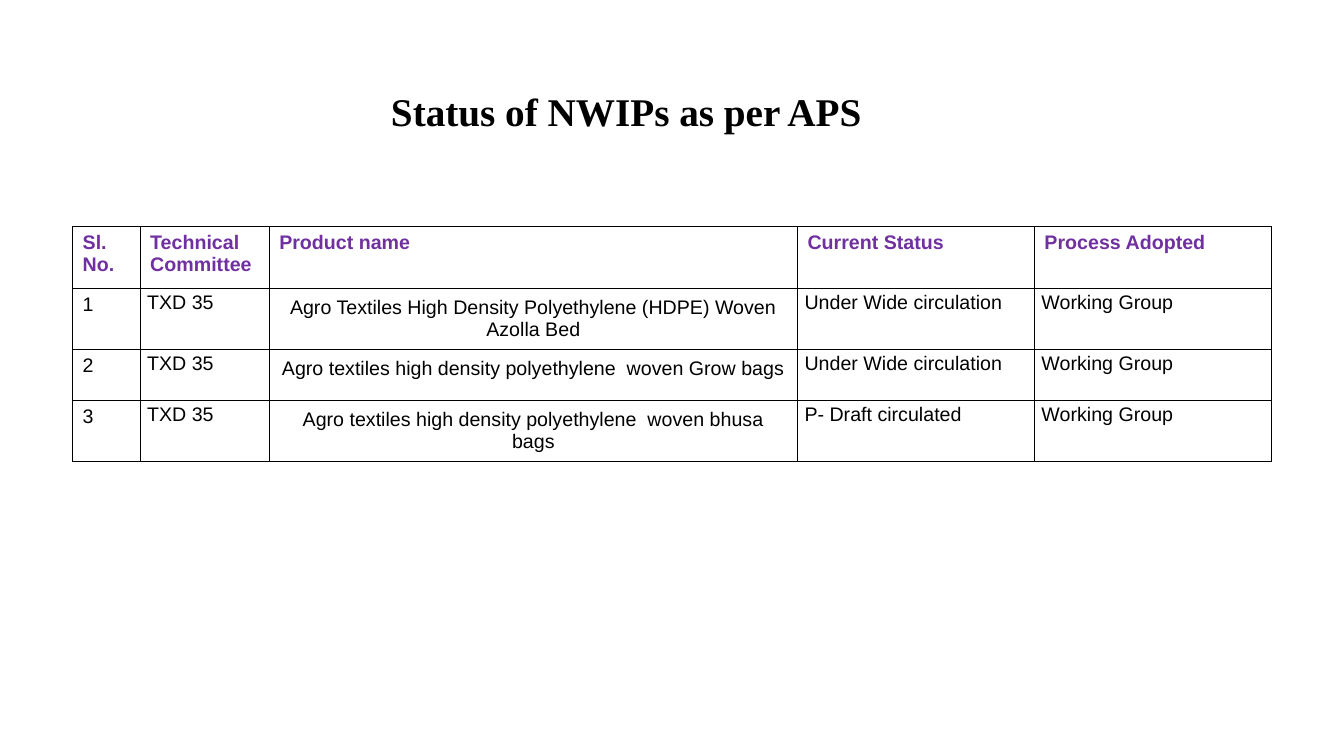
from lxml import etree
from pptx import Presentation
from pptx.dml.color import RGBColor
from pptx.enum.text import MSO_ANCHOR, PP_ALIGN
from pptx.oxml.ns import qn
from pptx.util import Inches, Pt

LEFT, CENTER = PP_ALIGN.LEFT, PP_ALIGN.CENTER
MIDDLE = MSO_ANCHOR.MIDDLE
BLACK = RGBColor(0x00, 0x00, 0x00)
PURPLE = RGBColor(0x70, 0x30, 0xA0)

TITLE = "Status of NWIPs as per APS"
HEADER = ("Sl. No.", "Technical Committee", "Product name", "Current Status", "Process Adopted")
PROJECTS = [
    ("1", "TXD 35", "Agro Textiles High Density Polyethylene (HDPE) Woven Azolla Bed",
     "Under Wide circulation", "Working Group"),
    ("2", "TXD 35", "Agro textiles high density polyethylene  woven Grow bags",
     "Under Wide circulation", "Working Group"),
    ("3", "TXD 35", "Agro textiles high density polyethylene  woven bhusa bags",
     "P- Draft circulated", "Working Group"),
]

TABLE_LEFT, TABLE_TOP = 0.72, 2.25
COLUMN_WIDTHS = (0.67, 1.28, 5.24, 2.35, 2.35)
ROW_HEIGHTS = (0.61, 0.61, 0.5, 0.61)

# Horizontal margin, vertical margin, alignment, line spacing
LABEL_LAYOUT = (0.1, 0.05, LEFT, 1.0)
DETAIL_LAYOUT = (0.07, 0, LEFT, 1.15)
PRODUCT_LAYOUT = (0.1, 0.08, CENTER, 1.0)
BODY_LAYOUTS = (LABEL_LAYOUT, DETAIL_LAYOUT, PRODUCT_LAYOUT, DETAIL_LAYOUT, DETAIL_LAYOUT)

TITLE_FONT = {"name": "Times New Roman", "size": Pt(28), "bold": True}
HEADER_FONT = {"name": "Arial", "size": Pt(14), "bold": True}
BODY_FONT = {"name": "Arial", "size": Pt(14), "bold": False}


def set_format(target, values):
    for name, value in values.items():
        setattr(target, name, value)


def write(frame, text, font, color, align, spacing):
    para = frame.paragraphs[0]
    set_format(para, {"alignment": align, "line_spacing": spacing})
    span = para.add_run()
    span.text = text
    set_format(span.font, font)
    span.font.color.rgb = color


def add_borders(cell):
    """Draw a thin black line on all four sides; call before setting the fill."""
    properties = cell._tc.get_or_add_tcPr()
    for side in ("a:lnL", "a:lnR", "a:lnT", "a:lnB"):
        line = etree.SubElement(properties, qn(side), w=str(Pt(1)))
        fill = etree.SubElement(line, qn("a:solidFill"))
        etree.SubElement(fill, qn("a:srgbClr"), val=str(BLACK))


def fill_cell(cell, text, font, color, layout):
    side, end, align, spacing = layout
    set_format(cell, {"margin_left": Inches(side), "margin_right": Inches(side),
                      "margin_top": Inches(end), "margin_bottom": Inches(end)})
    add_borders(cell)
    cell.fill.background()
    write(cell.text_frame, text, font, color, align, spacing)


def add_title(page):
    box = page.shapes.add_textbox(Inches(3.78), Inches(0.68), Inches(9), Inches(0.89))
    set_format(box.text_frame, {"word_wrap": True, "vertical_anchor": MIDDLE})
    write(box.text_frame, TITLE, TITLE_FONT, BLACK, LEFT, 0.9)


def add_status_table(page):
    table = page.shapes.add_table(
        len(ROW_HEIGHTS), len(COLUMN_WIDTHS), Inches(TABLE_LEFT), Inches(TABLE_TOP),
        Inches(sum(COLUMN_WIDTHS)), Inches(sum(ROW_HEIGHTS))).table
    set_format(table, {"first_row": False, "horz_banding": False})
    for column, width in zip(table.columns, COLUMN_WIDTHS):
        column.width = Inches(width)
    for row, height in zip(table.rows, ROW_HEIGHTS):
        row.height = Inches(height)
    for index, text in enumerate(HEADER):
        fill_cell(table.cell(0, index), text, HEADER_FONT, PURPLE, LABEL_LAYOUT)
    for row, project in enumerate(PROJECTS, start=1):
        for index, (text, layout) in enumerate(zip(project, BODY_LAYOUTS)):
            fill_cell(table.cell(row, index), text, BODY_FONT, BLACK, layout)


def main():
    deck = Presentation()
    set_format(deck, {"slide_width": Inches(13.33), "slide_height": Inches(7.5)})
    page = deck.slides.add_slide(deck.slide_layouts[6])
    add_status_table(page)
    add_title(page)
    deck.save("out.pptx")


if __name__ == "__main__":
    main()
